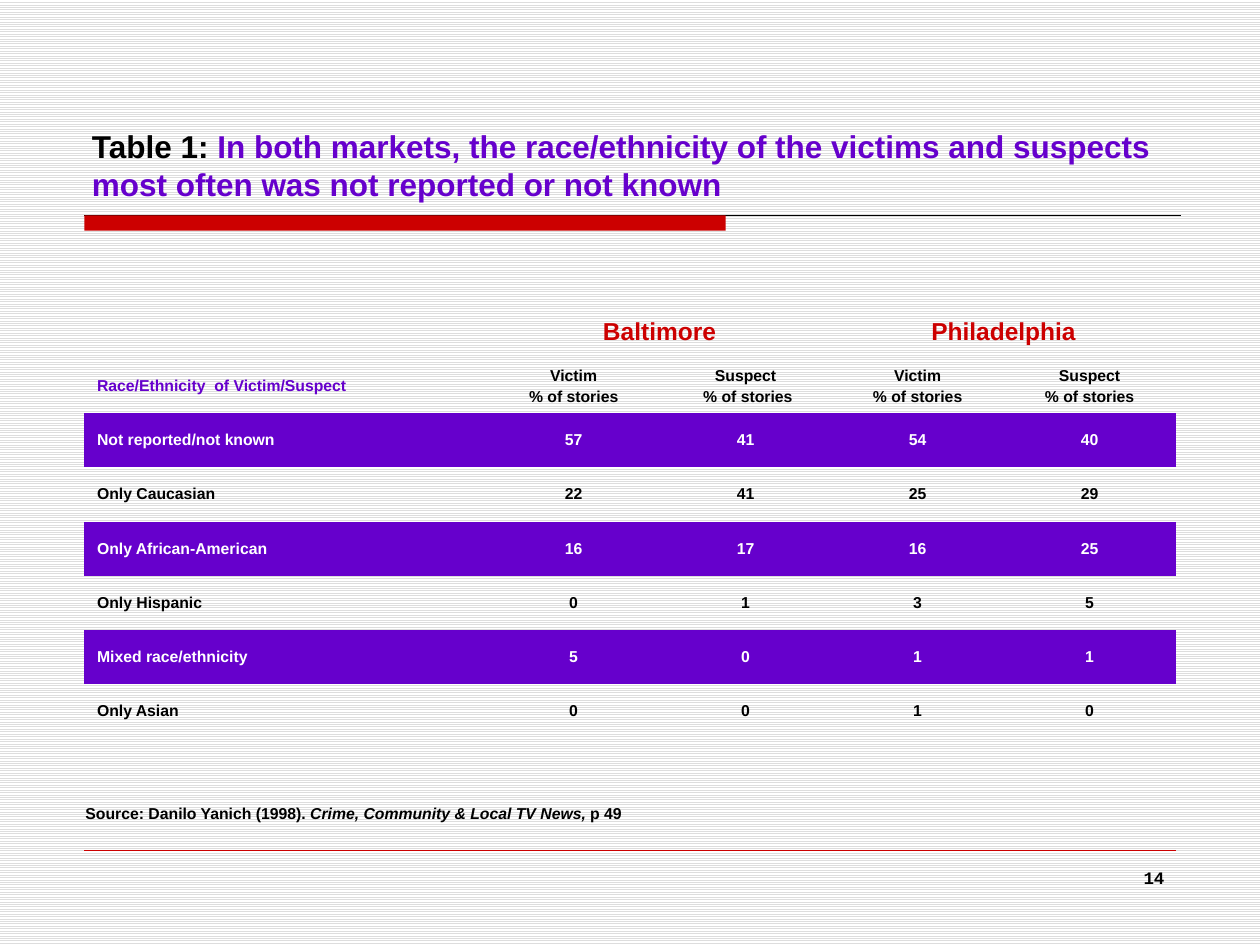
import pptx
import pptx.util
import pptx.dml.color
import pptx.enum.dml
import pptx.enum.shapes
import pptx.enum.text
import pptx.oxml.ns
import lxml.etree

Inches, Pt = pptx.util.Inches, pptx.util.Pt
RGBColor = pptx.dml.color.RGBColor
ALIGN, ANCHOR = pptx.enum.text.PP_ALIGN, pptx.enum.text.MSO_ANCHOR
qn = pptx.oxml.ns.qn

BLACK = RGBColor(0x00, 0x00, 0x00)
WHITE = RGBColor(0xFF, 0xFF, 0xFF)
GREY = RGBColor(0xDD, 0xDD, 0xDD)
RED = RGBColor(0xCC, 0x00, 0x00)
PURPLE = RGBColor(0x66, 0x00, 0xCC)
NO_GRID_STYLE = "{2D5ABB26-0587-4C30-8999-92F81FD0307C}"

LEFT, RIGHT = 0.67, 9.33
RULE_TOP = 1.71
LABEL_W, VALUE_W, ROW_H = 3.2, 1.365, 0.43


def style(p, size, color, name="Arial"):
    for r in p.runs:
        r.font.size, r.font.name, r.font.bold = Pt(size), name, True
        r.font.color.rgb = color


def add_rule(x1, x2, y, color, width):
    line = s.shapes.add_connector(pptx.enum.shapes.MSO_CONNECTOR.STRAIGHT,
                                  Inches(x1), Inches(y), Inches(x2), Inches(y))
    line.line.color.rgb, line.line.width = color, Pt(width)
    lxml.etree.SubElement(line._element.spPr, qn("a:effectLst"))


prs = pptx.Presentation()
prs.slide_width, prs.slide_height = Inches(10), Inches(7.5)
s = prs.slides.add_slide(prs.slide_layouts[5])
fill = s.background.fill
fill.patterned()
fill.pattern = pptx.enum.dml.MSO_PATTERN.LIGHT_HORIZONTAL
fill.fore_color.rgb, fill.back_color.rgb = GREY, WHITE

# Rules of the page
add_rule(LEFT, 9.37, RULE_TOP, BLACK, 0.75)
bar = s.shapes.add_shape(pptx.enum.shapes.MSO_SHAPE.RECTANGLE, Inches(LEFT),
                         Inches(RULE_TOP), Inches(5.09), Inches(0.12))
bar.shadow.inherit = False
bar.fill.solid()
bar.fill.fore_color.rgb = RED
bar.line.fill.background()
add_rule(LEFT, RIGHT, 6.75, RED, 0.25)

# Title
title = s.shapes.title
title.left, title.top, title.width, title.height = map(Inches, (0.63, 0.33, 8.75, 1.33))
tf = title.text_frame
tf.word_wrap, tf.vertical_anchor = True, ANCHOR.BOTTOM
tf.auto_size = pptx.enum.text.MSO_AUTO_SIZE.NONE
p = tf.paragraphs[0]
p.alignment = ALIGN.LEFT
for text in ("Table 1:", " In both markets, the race/ethnicity of the victims and suspects "
             "most often was not reported or not known"):
    p.add_run().text = text
style(p, 18, PURPLE)
p.runs[0].font.color.rgb = BLACK

# Table
rows = [
    ("", "Baltimore", "", "Philadelphia", ""),
    ("Race/Ethnicity  of Victim/Suspect", "Victim\n% of stories", "Suspect\n % of stories",
     "Victim\n% of stories", "Suspect\n% of stories"),
    ("Not reported/not known", 57, 41, 54, 40),
    ("Only Caucasian", 22, 41, 25, 29),
    ("Only African-American", 16, 17, 16, 25),
    ("Only Hispanic", 0, 1, 3, 5),
    ("Mixed race/ethnicity", 5, 0, 1, 1),
    ("Only Asian", 0, 0, 1, 0),
]
frame = s.shapes.add_table(len(rows), 5, Inches(LEFT), Inches(2.42),
                           Inches(LABEL_W + 4 * VALUE_W), Inches(ROW_H * len(rows)))
table = frame.table
table.first_row = table.horz_banding = False
next(frame._element.iter(qn("a:tableStyleId"))).text = NO_GRID_STYLE
for j, column in enumerate(table.columns):
    column.width = Inches(VALUE_W if j else LABEL_W)
for j in (1, 3):
    table.cell(0, j).merge(table.cell(0, j + 1))

for i, row in enumerate(rows):
    table.rows[i].height = Inches(ROW_H)
    banded = i >= 2 and i % 2 == 0
    for j, value in enumerate(row):
        cell = table.cell(i, j)
        cell.vertical_anchor = ANCHOR.MIDDLE
        if banded:
            cell.fill.solid()
            cell.fill.fore_color.rgb = PURPLE
        else:
            cell.fill.background()
        if cell.is_spanned:
            continue
        size = 14 if i == 0 else 9
        color = RED if i == 0 else WHITE if banded else PURPLE if (i, j) == (1, 0) else BLACK
        cell.text_frame.text = str(value)
        for p in cell.text_frame.paragraphs:
            p.alignment = ALIGN.CENTER if j else ALIGN.LEFT
            p.space_before = Pt(round(size * 0.2))
            style(p, size, color)

# Source line
tf = s.shapes.add_textbox(Inches(0.58), Inches(6.33), Inches(4.58), Inches(0.25)).text_frame
tf.word_wrap = True
p = tf.paragraphs[0]
p.space_before = Pt(4.5)
for text in ("Source: Danilo Yanich (1998).", " Crime, Community & Local TV News, ", "p 49"):
    p.add_run().text = text
style(p, 9, BLACK)
p.runs[1].font.italic = True

# Page number
tf = s.shapes.add_textbox(Inches(7.17), Inches(6.83), Inches(2.17), Inches(0.52)).text_frame
tf.word_wrap = True
tf.text = "14"
tf.paragraphs[0].alignment = ALIGN.RIGHT
style(tf.paragraphs[0], 10, BLACK, "Courier New")

prs.save("out.pptx")
